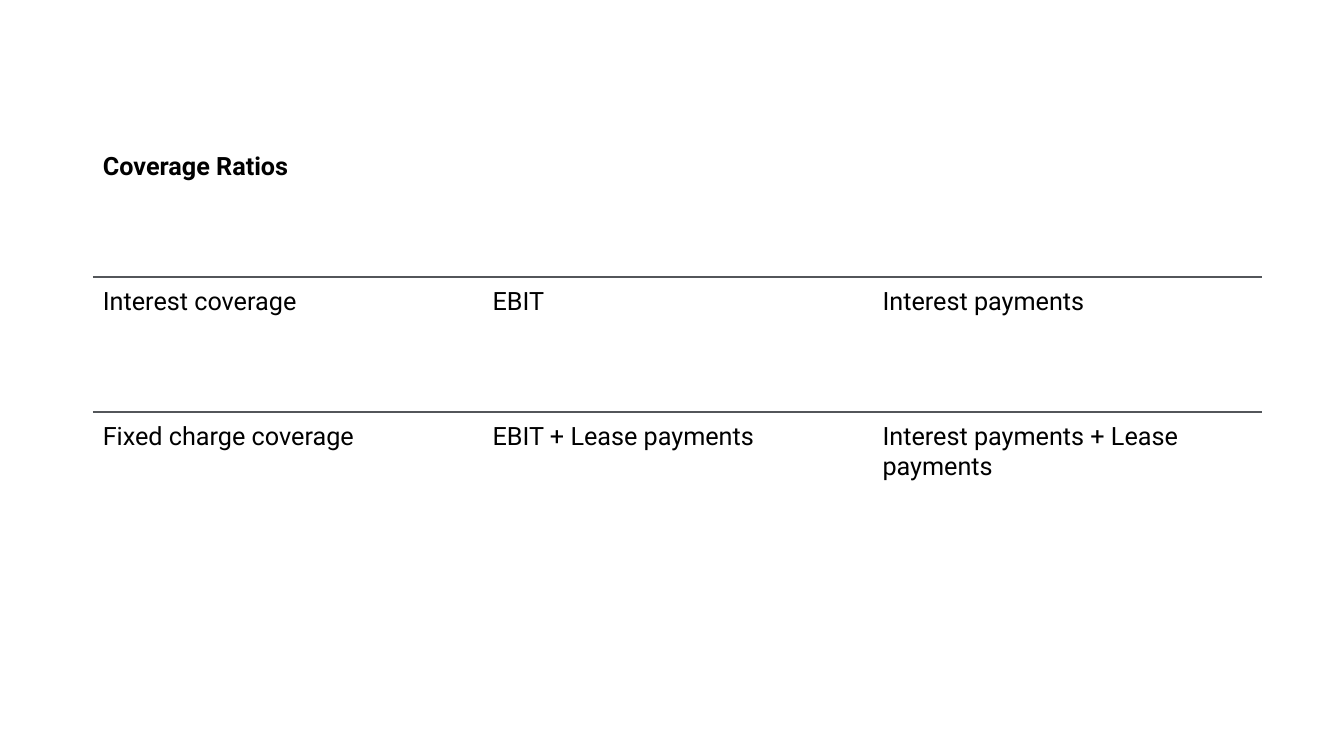
from lxml import etree
from pptx import Presentation
from pptx.dml.color import RGBColor
from pptx.oxml.ns import qn
from pptx.util import Inches, Pt

ROWS = [
    ("Coverage Ratios", "", ""),
    ("Interest coverage", "EBIT", "Interest payments"),
    ("Fixed charge coverage", "EBIT + Lease payments", "Interest payments + Lease payments"),
]
ROW_HEIGHTS = [1.34, 1.34, 2.13]
LEFT, TOP, WIDTH = 0.92, 1.41, 11.6
MARGIN = 0.1
FONT, SIZE = "Roboto", 18
TEXT, RULE = "000000", "53565A"
RULE_WIDTH = 1.5
NO_STYLE = "{2D5ABB26-0587-4C30-8999-92F81FD0307C}"


def color(value):
    return RGBColor.from_string(value)


def add_border(cell, side):
    """Draw one side of a cell; borders come before the fill in tcPr."""
    ln = etree.Element(qn("a:" + side), w=str(Pt(RULE_WIDTH)))
    fill = etree.SubElement(ln, qn("a:solidFill"))
    etree.SubElement(fill, qn("a:srgbClr"), val=RULE)
    cell._tc.get_or_add_tcPr().insert(0, ln)


def format_cell(cell, text, bold):
    cell.fill.background()
    cell.margin_left = cell.margin_right = Inches(MARGIN)
    cell.margin_top = cell.margin_bottom = Inches(MARGIN)
    cell.text = text
    font = cell.text_frame.paragraphs[0].font
    font.name, font.size, font.bold = FONT, Pt(SIZE), bold
    font.color.rgb = color(TEXT)


def main():
    prs = Presentation()
    prs.slide_width, prs.slide_height = Inches(13.33), Inches(7.5)
    s = prs.slides.add_slide(prs.slide_layouts[6])

    # Plain table with equal columns
    frame = s.shapes.add_table(len(ROWS), len(ROWS[0]), Inches(LEFT), Inches(TOP),
                               Inches(WIDTH), Inches(sum(ROW_HEIGHTS)))
    table = frame.table
    table.horz_banding = False
    table._tbl.tblPr.find(qn("a:tableStyleId")).text = NO_STYLE
    for column in table.columns:
        column.width = Inches(WIDTH / len(ROWS[0]))

    # Cells, with a rule between the heading and the ratios
    for i, (texts, height) in enumerate(zip(ROWS, ROW_HEIGHTS)):
        table.rows[i].height = Inches(height)
        for j, text in enumerate(texts):
            cell = table.cell(i, j)
            format_cell(cell, text, bold=i == 0)
            if i < 2:
                add_border(cell, ("lnB", "lnT")[i])

    prs.save("out.pptx")


if __name__ == "__main__":
    main()
